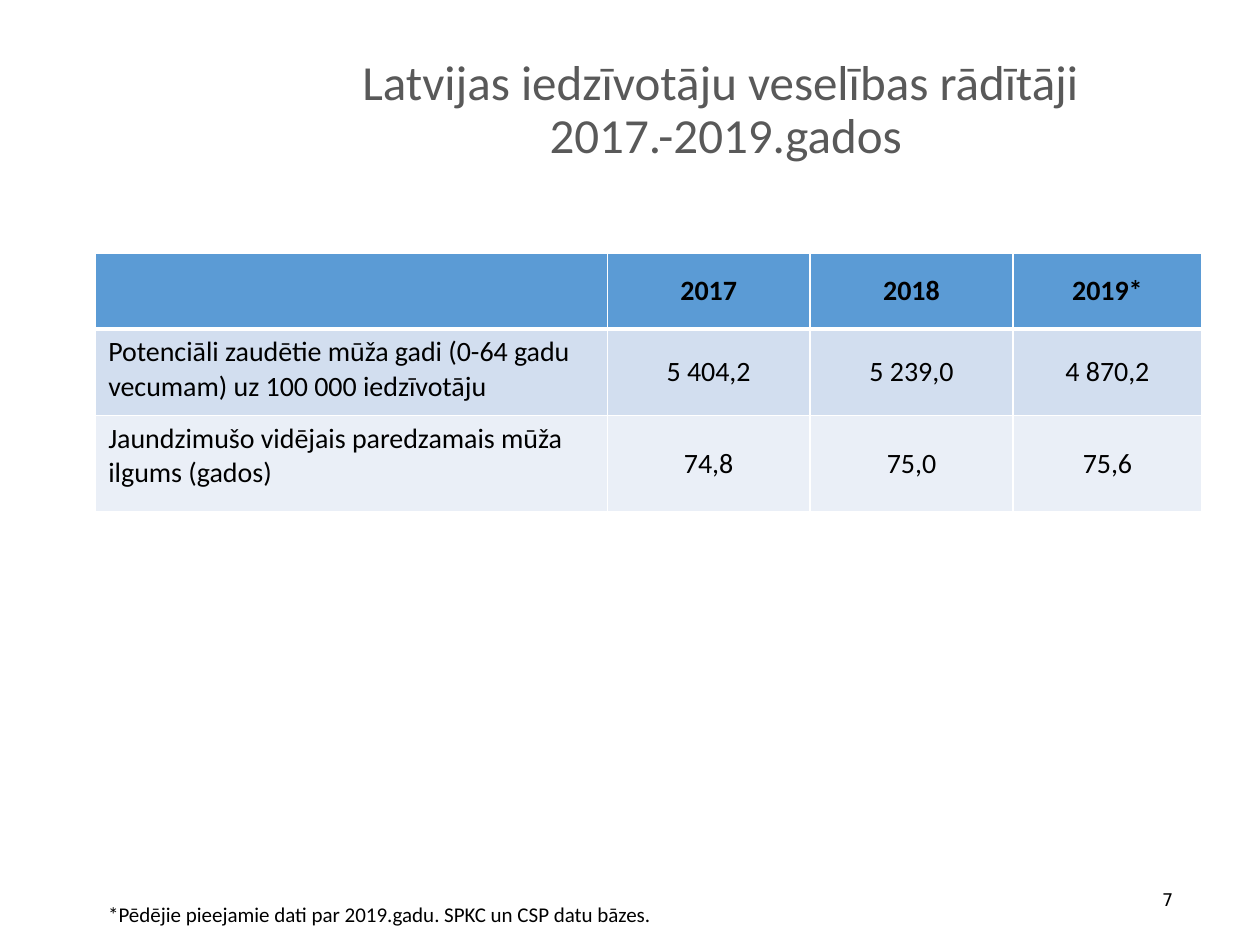
from lxml import etree
from pptx import Presentation
from pptx import util as u
from pptx.dml.color import RGBColor
from pptx.enum import text
from pptx.oxml.ns import qn


def color(value):
    return RGBColor.from_string(value)


def write(frame, content, size=16, font="Calibri", fill="000000", bold=False,
          align=text.PP_ALIGN.LEFT, spacing=None):
    frame.word_wrap = True
    frame.text = content
    paragraph = frame.paragraphs[0]
    paragraph.alignment = align
    paragraph.line_spacing = spacing
    for run in paragraph.runs:
        run.font.size = u.Pt(size)
        run.font.name = font
        run.font.bold = bold
        run.font.color.rgb = color(fill)


class SlideBuilder:
    header_fill = "5B9BD5"
    band_fills = ("D2DEEF", "EAEFF7")
    border_color = "FFFFFF"
    title_color = "595959"

    def __init__(self, presentation):
        self.slide = presentation.slides.add_slide(presentation.slide_layouts[5])

    def title(self, content, left, top, width, height):
        shape = self.slide.shapes.title
        shape.left, shape.top = u.Inches(left), u.Inches(top)
        shape.width, shape.height = u.Inches(width), u.Inches(height)
        frame = shape.text_frame
        frame.auto_size = text.MSO_AUTO_SIZE.NONE
        frame.vertical_anchor = text.MSO_ANCHOR.TOP
        write(frame, content, size=28, fill=self.title_color,
              align=text.PP_ALIGN.CENTER, spacing=0.9)

    def text_box(self, content, left, top, width, height,
                 anchor=text.MSO_ANCHOR.TOP, **style):
        shape = self.slide.shapes.add_textbox(
            u.Inches(left), u.Inches(top), u.Inches(width), u.Inches(height))
        shape.text_frame.vertical_anchor = anchor
        write(shape.text_frame, content, **style)

    def borders(self, cell, bottom):
        properties = cell._tc.get_or_add_tcPr()
        sides = (("a:lnL", 1), ("a:lnR", 1), ("a:lnT", 1), ("a:lnB", bottom))
        for position, (side, width) in enumerate(sides):
            line = etree.Element(qn(side), w=str(u.Pt(width)))
            fill = etree.SubElement(line, qn("a:solidFill"))
            etree.SubElement(fill, qn("a:srgbClr"), val=self.border_color)
            properties.insert(position, line)

    def table(self, rows, left, top, widths, heights):
        table = self.slide.shapes.add_table(
            len(rows), len(widths), u.Inches(left), u.Inches(top),
            u.Inches(sum(widths)), u.Inches(sum(heights))).table
        for column, width in zip(table.columns, widths):
            column.width = u.Inches(width)
        for row_index, values in enumerate(rows):
            table.rows[row_index].height = u.Inches(heights[row_index])
            header = row_index == 0
            fill = self.header_fill if header else self.band_fills[(row_index - 1) % 2]
            for column_index, value in enumerate(values):
                cell = table.cell(row_index, column_index)
                cell.fill.solid()
                cell.fill.fore_color.rgb = color(fill)
                self.borders(cell, bottom=3 if header else 1)
                label = column_index == 0
                cell.vertical_anchor = text.MSO_ANCHOR.TOP if label else text.MSO_ANCHOR.MIDDLE
                write(cell.text_frame, value, bold=header,
                      align=text.PP_ALIGN.LEFT if label else text.PP_ALIGN.CENTER)


def main():
    presentation = Presentation()
    presentation.slide_width = u.Inches(10)
    presentation.slide_height = u.Inches(7.5)
    builder = SlideBuilder(presentation)
    builder.title("Latvijas iedzīvotāju veselības rādītāji \v2017.-2019.gados",
                  1.85, 0.41, 7.82, 1.14)
    builder.text_box("*Pēdējie pieejamie dati par 2019.gadu. SPKC un CSP datu bāzes.",
                     0.76, 7.11, 9.01, 0.3, size=12)
    builder.table(
        [
            ("", "2017", "2018", "2019*"),
            ("Potenciāli zaudētie mūža gadi (0-64 gadu vecumam) uz 100 000 iedzīvotāju",
             "5 404,2", "5 239,0", "4 870,2"),
            ("Jaundzimušo vidējais paredzamais mūža ilgums (gados)",
             "74,8", "75,0", "75,6"),
        ],
        0.76, 2.01, widths=(4.06, 1.61, 1.61, 1.5), heights=(0.6, 0.69, 0.76))
    builder.text_box("7", 8.56, 6.94, 0.85, 0.4, anchor=text.MSO_ANCHOR.MIDDLE,
                     size=10, font="DejaVu Sans", align=text.PP_ALIGN.RIGHT)
    presentation.save("out.pptx")


if __name__ == "__main__":
    main()
